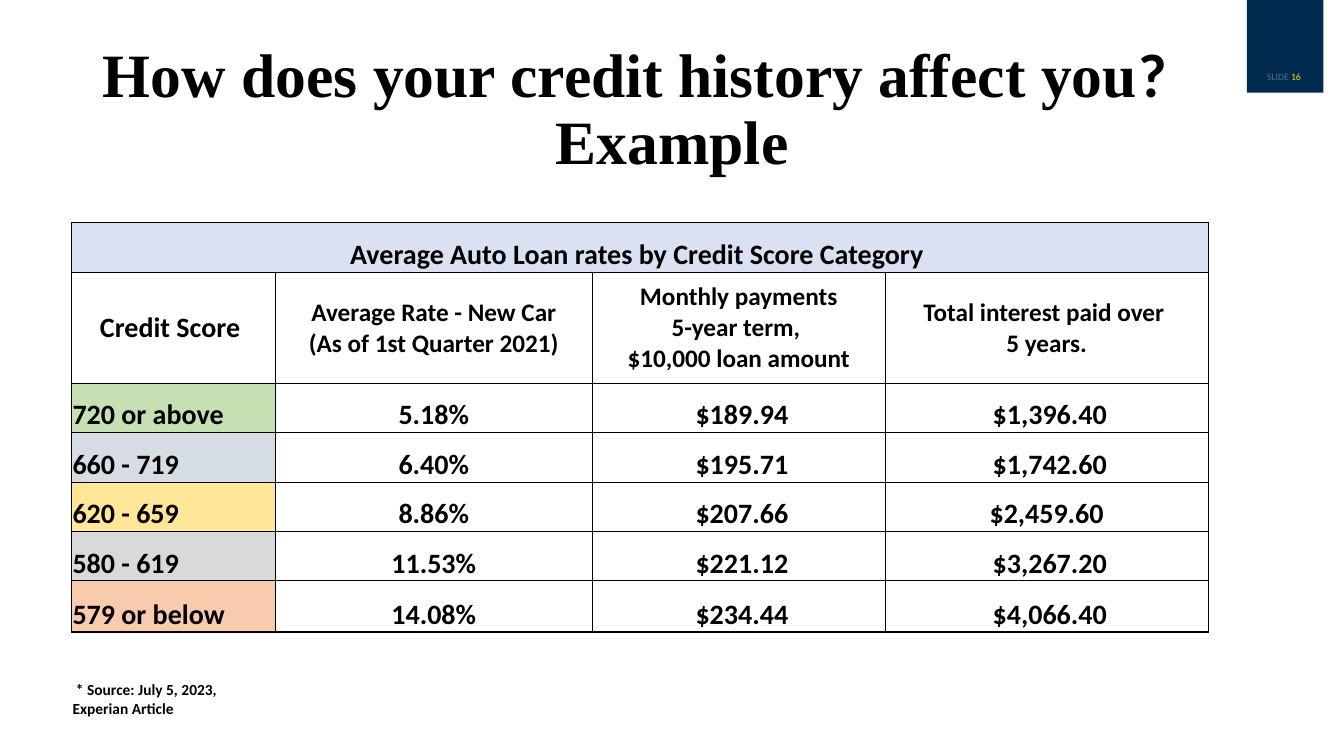
import dataclasses
import typing

import pptx
import pptx.dml.color
import pptx.enum.shapes
import pptx.enum.text
import pptx.oxml
import pptx.oxml.ns
import pptx.util

Pt = pptx.util.Pt
Align = pptx.enum.text.PP_ALIGN
Anchor = pptx.enum.text.MSO_ANCHOR

COLORS = {
    "black": "000000", "white": "FFFFFF", "navy": "002A4E", "gold": "FCD60B",
    "head": "D9E1F2", "green": "C6E0B4", "slate": "D6DCE4",
    "yellow": "FFE699", "gray": "D9D9D9", "peach": "F8CBAD",
}
SANS, SERIF = "Calibri", "Times New Roman"
WIDTHS = [145.4, 226.8, 208.8, 231.1]
HEIGHTS = [35.3, 79.2, 35.3, 35.3, 35.3, 35.3, 36.7, 29.5, 32.4]
THICK, THIN = 1, 0.5


@dataclasses.dataclass
class Score:
    band: str
    rate: str
    payment: str
    total: str
    fill: str


TITLE = "Average Auto Loan rates by Credit Score Category "
HEADS = [
    "Credit Score ",
    "Average Rate - New Car\n(As of 1st Quarter 2021)",
    "Monthly payments\n5-year term, \n$10,000 loan amount",
    "Total interest paid over \n5 years.",
]
SCORES = [
    Score("720 or above", "5.18%", " $189.94", " $1,396.40", "green"),
    Score("660 - 719", "6.40%", " $195.71", " $1,742.60", "slate"),
    Score("620 - 659", "8.86%", " $207.66", " $2,459.60 ", "yellow"),
    Score("580 - 619", "11.53%", " $221.12", " $3,267.20", "gray"),
    Score("579 or below", "14.08%", " $234.44", " $4,066.40", "peach"),
]
LAST = len(SCORES) + 1


def tint(name: str) -> pptx.dml.color.RGBColor:
    return pptx.dml.color.RGBColor.from_string(COLORS[name])


def write(para: typing.Any, text: str, *, size: float, font: str = SANS,
          color: str = "black", bold: bool = True,
          align: typing.Any = Align.LEFT, alpha: int = 100) -> None:
    """Add one run to the paragraph; alpha is its opacity in percent."""
    para.alignment = align
    run = para.add_run()
    run.text = text
    run.font.size, run.font.name, run.font.bold = Pt(size), font, bold
    run.font.color.rgb = tint(color)
    if alpha < 100:
        for clr in run.font._element.iter(pptx.oxml.ns.qn("a:srgbClr")):
            clr.append(pptx.oxml.parse_xml(
                f'<a:alpha {pptx.oxml.ns.nsdecls("a")} val="{alpha * 1000}"/>'))


def edge(cell: typing.Any, **sides: float) -> None:
    """Draw the borders L, R, T and B in that order; zero hides one."""
    for side in "LRTB":
        width = sides.get(side, 0)
        fill = (f'<a:solidFill><a:srgbClr val="{COLORS["black"]}"/></a:solidFill>'
                if width else "<a:noFill/>")
        cell._tc.get_or_add_tcPr().append(pptx.oxml.parse_xml(
            f'<a:ln{side} {pptx.oxml.ns.nsdecls("a")} w="{Pt(width)}">{fill}</a:ln{side}>'))


def pad(cell: typing.Any, anchor: typing.Any) -> None:
    cell.margin_left = cell.margin_right = cell.margin_top = Pt(0.7)
    cell.margin_bottom = Pt(0)
    cell.vertical_anchor = anchor


def fill_cell(cell: typing.Any, text: str, *, size: float = 20,
              align: typing.Any = Align.CENTER, anchor: typing.Any = Anchor.BOTTOM,
              fill: typing.Optional[str] = None) -> None:
    pad(cell, anchor)
    for i, line in enumerate(text.split("\n")):
        para = cell.text_frame.add_paragraph() if i else cell.text_frame.paragraphs[0]
        write(para, line, size=size, align=align)
    if fill:
        cell.fill.solid()
        cell.fill.fore_color.rgb = tint(fill)


def draw_title(slide: typing.Any) -> None:
    title = slide.shapes.title
    title.left, title.top, title.width, title.height = map(Pt, (66.2, 28.8, 828, 104.4))
    frame = title.text_frame
    frame.word_wrap = True
    frame.auto_size = pptx.enum.text.MSO_AUTO_SIZE.NONE
    frame.vertical_anchor = Anchor.MIDDLE
    first, second = frame.paragraphs[0], frame.add_paragraph()
    for para in (first, second):
        para.line_spacing = 0.8
        para.space_before, para.space_after = Pt(0), Pt(6)
    write(first, "How does your credit history affect you", size=44, font=SERIF)
    write(first, "?", size=44)
    write(second, "Example", size=44, font=SERIF, align=Align.CENTER)


def draw_tag(slide: typing.Any) -> None:
    """Draw the corner block with the slide number."""
    left, width = Pt(890.6), Pt(54.7)
    block = slide.shapes.add_shape(
        pptx.enum.shapes.MSO_SHAPE.RECTANGLE, left, Pt(0), width, Pt(66.2))
    block.shadow.inherit = False
    block.fill.solid()
    block.fill.fore_color.rgb = tint("navy")
    block.line.fill.background()
    frame = slide.shapes.add_textbox(left, Pt(46.8), width, Pt(15.8)).text_frame
    frame.word_wrap = True
    para = frame.paragraphs[0]
    look = {"size": 7, "bold": False, "align": Align.CENTER}
    write(para, "SLIDE ", color="white", alpha=31, **look)
    write(para, "16 ", color="gold", **look)


def draw_table(slide: typing.Any) -> None:
    table = slide.shapes.add_table(
        len(HEIGHTS), len(WIDTHS), Pt(51.1), Pt(159.1),
        Pt(sum(WIDTHS)), Pt(sum(HEIGHTS))).table
    table.first_row = table.horz_banding = False
    for col, width in zip(table.columns, WIDTHS):
        col.width = Pt(width)
    for row, height in zip(table.rows, HEIGHTS):
        row.height = Pt(height)
    table.cell(0, 0).merge(table.cell(0, len(WIDTHS) - 1))

    for r, row in enumerate(table.rows):
        for c, cell in enumerate(row.cells):
            cell.fill.background()
            if r > LAST:
                edge(cell, T=THICK if r == LAST + 1 else 0)
            elif not cell.is_spanned:
                right = r == 0 or c == len(WIDTHS) - 1
                edge(cell, L=THIN if c else THICK, R=THICK if right else THIN,
                     T=THIN if r else THICK, B=THICK if r == LAST else THIN)
            # The schema wants the fill after the borders.
            props = cell._tc.tcPr
            props.append(props.find(pptx.oxml.ns.qn("a:noFill")))

    fill_cell(table.cell(0, 0), TITLE, fill="head")
    for c, head in enumerate(HEADS):
        fill_cell(table.cell(1, c), head, size=18 if c else 20, anchor=Anchor.MIDDLE)
    for r, score in enumerate(SCORES, 2):
        fill_cell(table.cell(r, 0), score.band, align=Align.LEFT, fill=score.fill)
        for c, text in enumerate((score.rate, score.payment, score.total), 1):
            fill_cell(table.cell(r, c), text)
    fill_cell(table.cell(LAST + 2, 0), " * Source: July 5, 2023, Experian Article",
              size=11, align=Align.LEFT)


def main() -> None:
    deck = pptx.Presentation()
    deck.slide_width, deck.slide_height = Pt(960), Pt(540)
    slide = deck.slides.add_slide(deck.slide_layouts[5])
    draw_tag(slide)
    draw_title(slide)
    draw_table(slide)
    deck.save("out.pptx")


if __name__ == "__main__":
    main()
